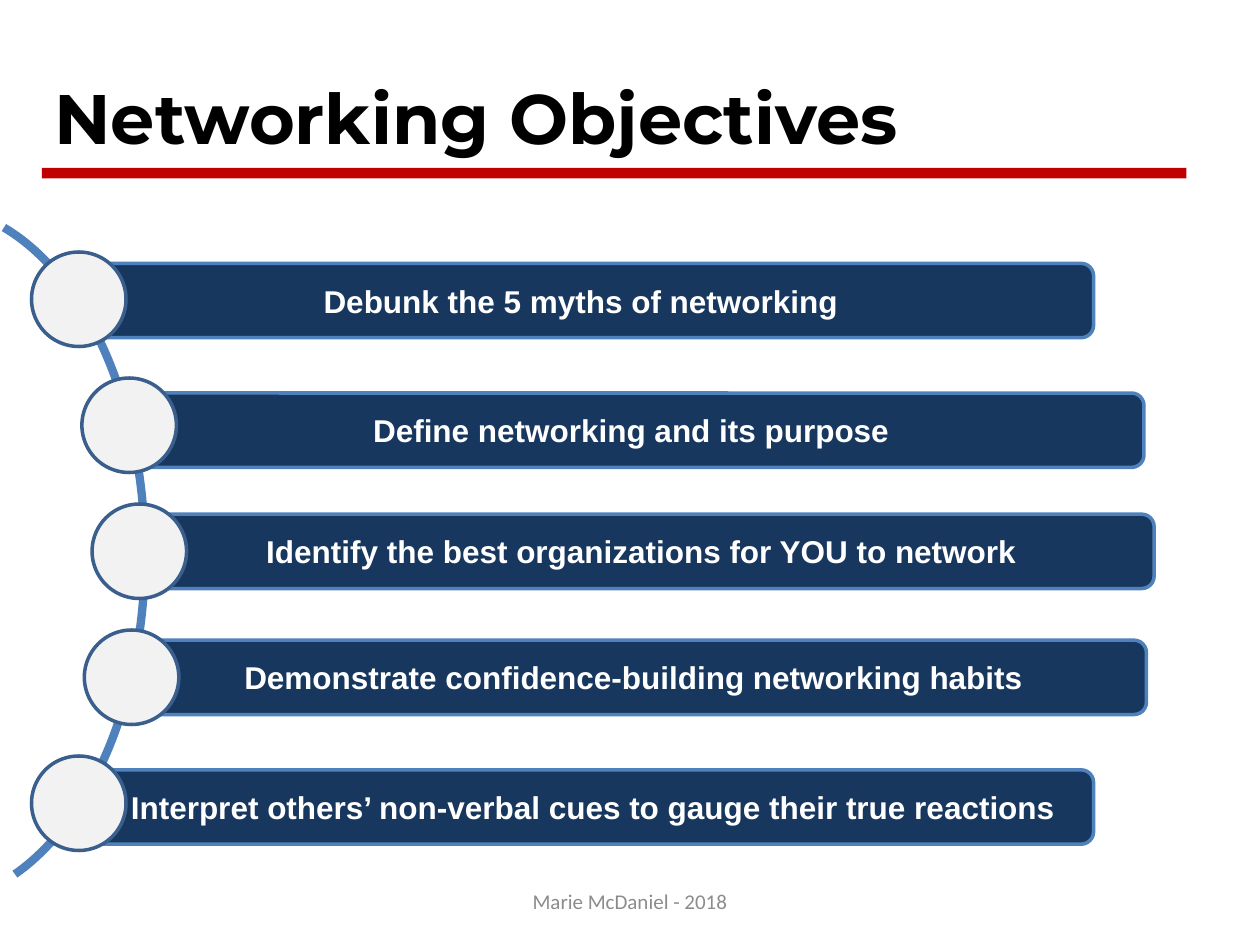
"""Build the Networking Objectives slide."""
from lxml import etree
from pptx import Presentation
from pptx.dml.color import RGBColor
from pptx.enum.shapes import MSO_SHAPE
from pptx.enum.text import MSO_ANCHOR, PP_ALIGN
from pptx.util import Pt

ARC, OVAL = MSO_SHAPE.ARC, MSO_SHAPE.OVAL
RECTANGLE, ROUNDED = MSO_SHAPE.RECTANGLE, MSO_SHAPE.ROUNDED_RECTANGLE
MIDDLE = MSO_ANCHOR.MIDDLE
LEFT, CENTER = PP_ALIGN.LEFT, PP_ALIGN.CENTER

BLACK = RGBColor(0x00, 0x00, 0x00)
WHITE = RGBColor(0xFF, 0xFF, 0xFF)
RED = RGBColor(0xC0, 0x00, 0x00)
BLUE = RGBColor(0x4F, 0x81, 0xBD)
NAVY = RGBColor(0x17, 0x37, 0x5E)
STEEL = RGBColor(0x3A, 0x5F, 0x8C)
PALE = RGBColor(0xF2, 0xF2, 0xF2)
GRAY = RGBColor(0x8C, 0x8C, 0x8C)

TITLE_FORMAT = {"name": "Montserrat", "size": Pt(40), "bold": True}
BAR_FORMAT = {"name": "Arial", "size": Pt(18), "bold": True}
FOOTER_FORMAT = {"name": "Calibri", "size": Pt(12), "bold": False}

CIRCLE_SIZE = 54
CIRCLE_TOP = 144
CIRCLE_STEP = 72
BAR_OFFSET = 20.9
OBJECTIVES = [
    ("Debunk the 5 myths of networking", 18, 150.5, 7.2),
    ("Define networking and its purpose", 46.8, 224.6, 7.2),
    ("Identify the best organizations for YOU to network", 52.6, 293.8, 7.2),
    ("Demonstrate confidence-building networking habits", 48.2, 365.8, 7.2),
    ("Interpret others’ non-verbal cues to gauge their true reactions", 18, 439.9, 21),
]


def add_figure(page, kind, place, fill=None, line=None, width=0):
    figure = page.shapes.add_shape(kind, *map(Pt, place))
    figure.shadow.inherit = False
    if fill is None:
        figure.fill.background()
    else:
        figure.fill.solid()
        figure.fill.fore_color.rgb = fill
    if line is None:
        figure.line.fill.background()
    else:
        figure.line.color.rgb = line
        figure.line.width = Pt(width)
    return figure


def write_text(box, text, formats, color, alignment):
    frame = box.text_frame
    frame.word_wrap = True
    frame.vertical_anchor = MIDDLE
    para = frame.paragraphs[0]
    para.alignment = alignment
    span = para.add_run()
    span.text = text
    for attribute, value in formats.items():
        setattr(span.font, attribute, value)
    span.font.color.rgb = color


deck = Presentation()
deck.slide_width, deck.slide_height = Pt(720), Pt(540)
page = deck.slides.add_slide(deck.slide_layouts[6])

title = page.shapes.add_textbox(Pt(24), Pt(21.6), Pt(660), Pt(90))
write_text(title, "Networking Objectives", TITLE_FORMAT, BLACK, LEFT)
add_figure(page, RECTANGLE, (24, 96, 654, 6), RED)

curve = add_figure(page, ARC, (-238.3, 194.4, 397.4, 244.8), line=BLUE, width=4.75)
curve.rotation = 90
curve.adjustments[0] = 115.57
curve.adjustments[1] = 207.16

for index, (text, left, bar_top, inset) in enumerate(OBJECTIVES):
    bar = add_figure(page, ROUNDED, (left + BAR_OFFSET, bar_top, 586, 42.5), NAVY, BLUE, 2)
    bar.text_frame.margin_left = Pt(inset)
    write_text(bar, text, BAR_FORMAT, WHITE, CENTER)
    circle_top = CIRCLE_TOP + index * CIRCLE_STEP
    add_figure(page, OVAL, (left, circle_top, CIRCLE_SIZE, CIRCLE_SIZE), PALE, STEEL, 2)

footer = page.shapes.add_textbox(Pt(246), Pt(500.4), Pt(228), Pt(28.8))
write_text(footer, "Marie McDaniel - 2018", FOOTER_FORMAT, GRAY, CENTER)

deck.save("out.pptx")
